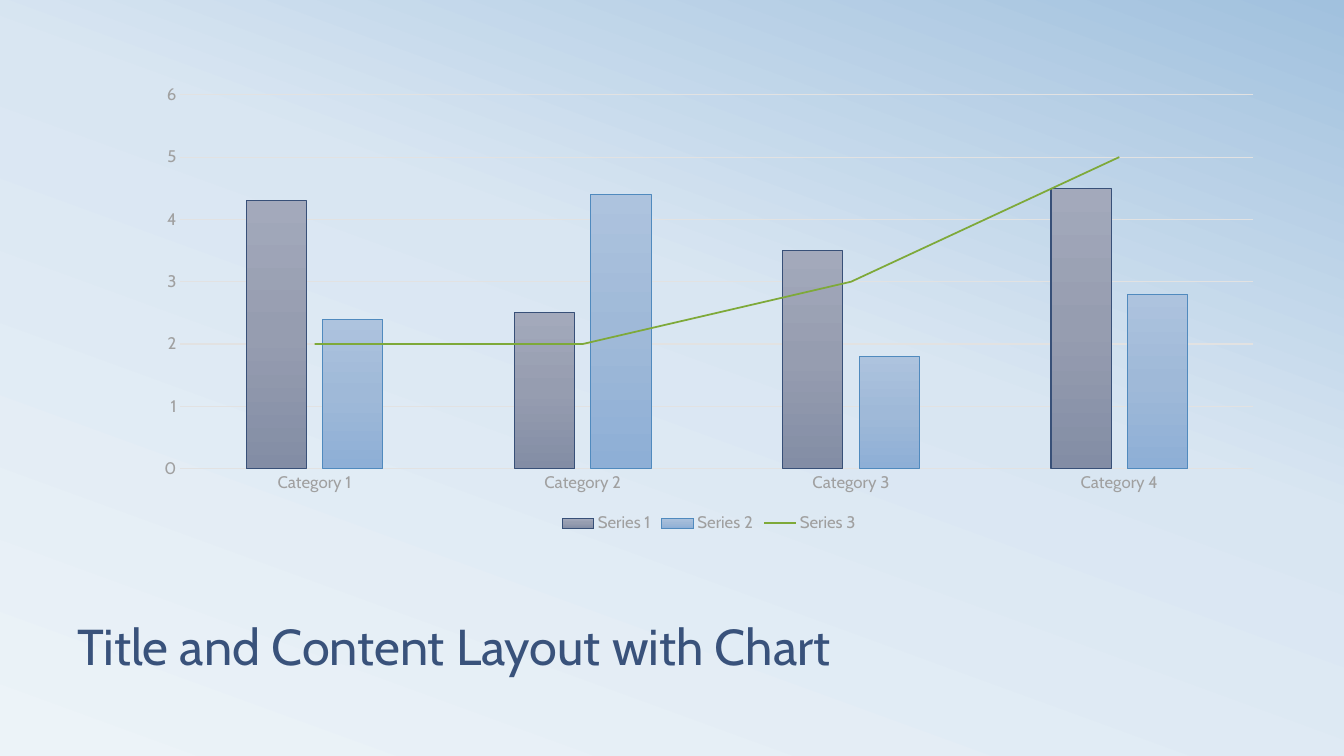
import lxml.etree
import pptx
import pptx.chart.data
import pptx.dml.color
import pptx.enum.chart
import pptx.enum.text
import pptx.oxml.ns
import pptx.util

THEME = {
    "font": "Cabin",
    "title_size": 36,
    "label_size": 12,
    "title": "39527B",
    "label": "A0A0A0",
    "grid": "E2E2E2",
    "trend": "7EA939",
    "background": [(0, "ECF3F8"), (58, "D9E6F2"), (100, "A1C1DE")],
    "bars": [
        ("385078", [(0, "A3A9BB"), (50, "969DB0"), (100, "838DA5")]),
        ("508ABE", [(0, "ADC3DE"), (50, "9FB9D8"), (100, "8EAFD6")]),
    ],
}
rgb = pptx.dml.color.RGBColor.from_string
qn = pptx.oxml.ns.qn


def write_text(frame, text, size, color, font, line_spacing, anchor):
    frame.word_wrap = True
    frame.vertical_anchor = anchor
    para = frame.paragraphs[0]
    para.line_spacing = line_spacing
    span = para.add_run()
    span.text = text
    span.font.size = pptx.util.Pt(size)
    span.font.name = font
    span.font.color.rgb = rgb(color)


def paint_gradient(fill, owner, stops, angle):
    fill.gradient()
    gradient = owner.find(".//" + qn("a:gradFill"))
    for child in list(gradient):
        gradient.remove(child)
    stop_list = lxml.etree.SubElement(gradient, qn("a:gsLst"))
    for share, color in stops:
        stop = lxml.etree.SubElement(stop_list, qn("a:gs"), pos=str(share * 1000))
        lxml.etree.SubElement(stop, qn("a:srgbClr"), val=color)
    lxml.etree.SubElement(gradient, qn("a:lin"), ang=str(angle * 60000), scaled="0")


deck = pptx.Presentation()
deck.slide_width = pptx.util.Inches(13.33)
deck.slide_height = pptx.util.Inches(7.5)
column = deck.slide_width / 20
row = deck.slide_height / 20
page = deck.slides.add_slide(deck.slide_layouts[6])
paint_gradient(page.background.fill, page.element, THEME["background"], 290)

data = pptx.chart.data.CategoryChartData()
data.categories = [f"Category {number}" for number in range(1, 5)]
data.add_series("Series 1", (4.3, 2.5, 3.5, 4.5))
data.add_series("Series 2", (2.4, 4.4, 1.8, 2.8))
data.add_series("Series 3", (2, 2, 3, 5))
chart = page.shapes.add_chart(
    pptx.enum.chart.XL_CHART_TYPE.COLUMN_CLUSTERED,
    int(2.11 * column), int(2 * row), int(16.88 * column), int(12.21 * row), data,
).chart
chart.has_title = False
chart.font.name = THEME["font"]
chart.font.size = pptx.util.Pt(THEME["label_size"])
chart.font.color.rgb = rgb(THEME["label"])
chart.has_legend = True
chart.legend.position = pptx.enum.chart.XL_LEGEND_POSITION.BOTTOM
chart.legend.include_in_layout = False

bar_plot = chart.plots[0]
bar_plot.gap_width = 219
bar_plot.overlap = -27
bar_plot.vary_by_categories = False

bar_group = chart.element.find(".//" + qn("c:barChart"))
trend = bar_group.findall(qn("c:ser"))[-1]
for bar_setting in trend.findall(qn("c:invertIfNegative")):
    trend.remove(bar_setting)
line_group = pptx.oxml.parse_xml(
    f'<c:lineChart xmlns:c="{pptx.oxml.ns.nsuri("c")}">'
    '<c:grouping val="standard"/><c:varyColors val="0"/></c:lineChart>'
)
line_group.append(trend)
lxml.etree.SubElement(line_group, qn("c:marker"), val="1")
for axis_id in bar_group.findall(qn("c:axId")):
    lxml.etree.SubElement(line_group, qn("c:axId"), val=axis_id.get("val"))
bar_group.addnext(line_group)

bar_elements = bar_group.findall(qn("c:ser"))
for series, element, (outline, stops) in zip(bar_plot.series, bar_elements, THEME["bars"]):
    paint_gradient(series.format.fill, element, stops, 90)
    series.format.line.color.rgb = rgb(outline)
    series.format.line.width = pptx.util.Pt(0.75)

trend_line = chart.plots[1].series[0]
trend_line.smooth = False
trend_line.marker.style = pptx.enum.chart.XL_MARKER_STYLE.NONE
trend_line.format.line.color.rgb = rgb(THEME["trend"])
trend_line.format.line.width = pptx.util.Pt(1.25)

value_axis = chart.value_axis
value_axis.minimum_scale = 0
value_axis.maximum_scale = 6
value_axis.major_unit = 1
value_axis.has_major_gridlines = True
value_axis.format.line.fill.background()
for axis in (chart.category_axis, value_axis):
    axis.major_tick_mark = pptx.enum.chart.XL_TICK_MARK.NONE
    axis.minor_tick_mark = pptx.enum.chart.XL_TICK_MARK.NONE
for ruled in (chart.category_axis, value_axis.major_gridlines):
    ruled.format.line.color.rgb = rgb(THEME["grid"])
    ruled.format.line.width = pptx.util.Pt(0.75)

title_box = page.shapes.add_textbox(
    int(column), int(14.88 * row), int(18 * column), int(3.12 * row)
)
write_text(
    title_box.text_frame, "Title and Content Layout with Chart",
    size=THEME["title_size"], color=THEME["title"], font=THEME["font"],
    line_spacing=0.8, anchor=pptx.enum.text.MSO_ANCHOR.BOTTOM,
)

deck.save("out.pptx")
